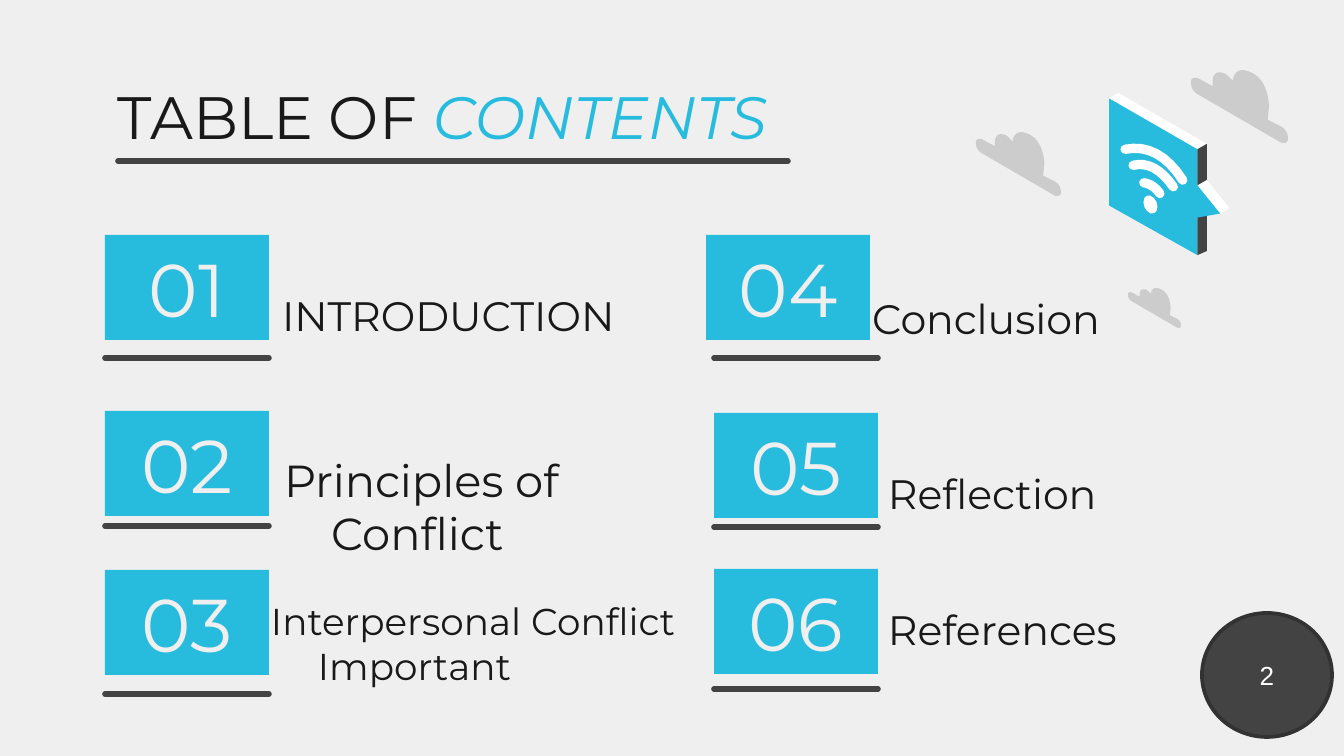
from dataclasses import dataclass

import pptx
import pptx.dml.color
import pptx.enum.shapes
import pptx.enum.text
import pptx.oxml
import pptx.oxml.ns
import pptx.util

RGB = pptx.dml.color.RGBColor
PAPER = RGB.from_string("EFEFEF")
INK = RGB.from_string("191919")
CYAN = RGB.from_string("27BBDE")
DARK = RGB.from_string("434343")
RIM = RGB.from_string("323232")
GREY = RGB.from_string("CCCCCC")
WHITE = RGB.from_string("FFFFFF")

SANS = "Montserrat"
PX = 914400 / 134.4
ANCHOR = pptx.enum.text.MSO_ANCHOR
ALIGN = pptx.enum.text.PP_ALIGN
SHAPE = pptx.enum.shapes.MSO_SHAPE
PAD = 13
TILE_W, TILE_H = 164, 105
COLUMNS = (105, 714)
STEPS = 8  # straight pieces per curve


@dataclass
class Entry:
    tile_y: int
    rule_y: int
    label: str
    left: int
    top: int
    width: int
    size: int = 22
    bottom: int = 0
    nudge: int = 0  # sideways shift of the tile


# One list per column; a label with a bottom margin also has a hanging indent
ENTRIES = [
    [Entry(235, 358, "INTRODUCTION", 269, 235, 391),
     Entry(411, 526, "Principles of Conflict", 251, 516, 437, 24, 61),
     Entry(570, 694, "Interpersonal Conflict Important", 238, 644, 614, 20, 61)],
    [Entry(235, 358, "Conclusion", 839, 251, 391, bottom=PAD, nudge=-8),
     Entry(413, 527, "Reflection", 875, 413, 370),
     Entry(569, 689, "References", 875, 549, 431)],
]

# Outlines: pairs are corners, four numbers are a control point and an end
CLOUD_GRID = 72
CLOUDS = [(1191, 70, 97), (1128, 288, 53), (976, 132, 85)]  # left, top, width
CLOUD = [(39, 0), (56, 3, 58, 26), (57, 37), (67, 42), (72, 45, 72, 51),
         (72, 55, 67, 54), (5, 18), (0, 15, 0, 9), (0, 5, 5, 6), (16, 12),
         (16, 8), (17, -1, 26, 3), (31, 8), (32, 0, 39, 0)]

BUBBLE_X, BUBBLE_Y, BUBBLE_SCALE = 1109, 93, 1.34
BUBBLE = [
    (WHITE, [(7, 0), (73, 38), (73, 118), (66, 121), (0, 84), (0, 4)]),
    (CYAN, [(0, 4), (66, 42), (66, 121), (0, 84)]),
    (DARK, [(73, 38), (73, 118), (66, 121), (66, 42)]),
    (WHITE, [(73, 65), (90, 86), (82, 91), (66, 69)]),
    (CYAN, [(66, 69), (83, 90), (66, 93), (62, 81)]),
]
WAVES = [[(26, 67), (33, 68, 38, 75)],
         [(18, 54), (34, 50, 48, 70)],
         [(12, 42), (37, 37, 55, 65)]]


def px(*values: float) -> list[int]:
    return [pptx.util.Emu(round(v * PX)) for v in values]


def set_all(target, **values) -> None:
    for name, value in values.items():
        setattr(target, name, value)


def frame(sp, anchor, top: int = PAD, bottom: int = PAD):
    tf = sp.text_frame
    side, top, bottom = px(PAD, top, bottom)
    set_all(tf, word_wrap=True, auto_size=pptx.enum.text.MSO_AUTO_SIZE.NONE,
            vertical_anchor=anchor, margin_left=side, margin_right=side,
            margin_top=top, margin_bottom=bottom)
    return tf.paragraphs[0]


def add_run(p, text: str, size: int, color: RGB, name: str = SANS, italic: bool = False) -> None:
    r = p.add_run()
    r.text = text
    set_all(r.font, size=pptx.util.Pt(size), name=name, italic=italic)
    r.font.color.rgb = color


def paint(sp, fill: RGB):
    sp.shadow.inherit = False
    sp.fill.solid()
    sp.fill.fore_color.rgb = fill
    sp.line.fill.background()
    return sp


def stroke(sp, color: RGB, points: float) -> None:
    sp.line.color.rgb = color
    sp.line.width = pptx.util.Pt(points)
    sp.line._get_or_add_ln().set("cap", "rnd")


def add_rule(slide, x: int, y: int, width: int) -> None:
    line = slide.shapes.add_connector(
        pptx.enum.shapes.MSO_CONNECTOR.STRAIGHT, *px(x, y, x + width, y))
    stroke(line, DARK, 3)
    line._element.spPr.append(pptx.oxml.parse_xml(
        f"<a:effectLst {pptx.oxml.ns.nsdecls('a')}/>"))


def flatten(nodes: list[tuple[int, ...]]) -> list[tuple[float, ...]]:
    points = [nodes[0]]
    for node in nodes[1:]:
        if len(node) == 2:
            points.append(node)
            continue
        start, control, end = points[-1], node[:2], node[2:]
        for i in range(1, STEPS + 1):
            t = i / STEPS
            points.append(tuple((1 - t)**2 * a + 2 * t * (1 - t) * b + t * t * c
                                for a, b, c in zip(start, control, end)))
    return points


def add_outline(slide, nodes: list[tuple[int, ...]], left: int, top: int,
                scale: float, close: bool = True):
    points = [tuple(px(left + x * scale, top + y * scale)) for x, y in flatten(nodes)]
    builder = slide.shapes.build_freeform(*points[0])
    builder.add_line_segments(points[1:], close=close)
    return builder.convert_to_shape()


def add_entry(slide, number: int, column: int, e: Entry) -> None:
    tile = paint(slide.shapes.add_shape(
        SHAPE.RECTANGLE, *px(column + e.nudge, e.tile_y, TILE_W, TILE_H)), CYAN)
    p = frame(tile, ANCHOR.MIDDLE)
    p.alignment = ALIGN.CENTER
    add_run(p, f"{number:02}", 40, PAPER)
    add_rule(slide, column, e.rule_y, TILE_W)
    box = slide.shapes.add_textbox(*px(e.left, e.top, e.width, TILE_H))
    p = frame(box, ANCHOR.BOTTOM, bottom=e.bottom)
    if e.bottom:
        for name, value in zip(("marL", "indent"), px(67, -47)):
            p._p.get_or_add_pPr().set(name, str(value))
    add_run(p, e.label, e.size, INK)


def add_bubble(slide) -> None:
    place = (BUBBLE_X, BUBBLE_Y, BUBBLE_SCALE)
    for fill, nodes in BUBBLE:
        paint(add_outline(slide, nodes, *place), fill)
    for nodes in WAVES:
        wave = add_outline(slide, nodes, *place, close=False)
        wave.shadow.inherit = False
        wave.fill.background()
        stroke(wave, WHITE, 5)
    dot = paint(slide.shapes.add_shape(SHAPE.OVAL, *px(1144, 195, 13, 19)), WHITE)
    dot.rotation = -22


def main() -> None:
    prs = pptx.Presentation()
    prs.slide_width, prs.slide_height = px(1344, 756)
    slide = prs.slides.add_slide(prs.slide_layouts[5])
    slide.background.fill.solid()
    slide.background.fill.fore_color.rgb = PAPER

    # Title
    title = slide.shapes.title
    set_all(title, **dict(zip(("left", "top", "width", "height"), px(105, 80, 1134, 70))))
    p = frame(title, ANCHOR.TOP, top=0)
    p.alignment = ALIGN.LEFT
    add_run(p, "TABLE OF ", 32, INK)
    add_run(p, "CONTENTS", 32, CYAN, italic=True)
    add_rule(slide, 118, 161, 670)

    # Contents
    number = 0
    for column, entries in zip(COLUMNS, ENTRIES):
        for entry in entries:
            number += 1
            add_entry(slide, number, column, entry)

    # Clouds and speech bubble
    for left, top, width in CLOUDS:
        paint(add_outline(slide, CLOUD, left, top, width / CLOUD_GRID), GREY)
    add_bubble(slide)

    # Page number
    badge = paint(slide.shapes.add_shape(SHAPE.OVAL, *px(1202, 613, 130, 124)), DARK)
    stroke(badge, RIM, 2)
    p = frame(badge, ANCHOR.MIDDLE)
    p.alignment = ALIGN.CENTER
    add_run(p, "2", 14, WHITE, "Arial")

    prs.save("out.pptx")


if __name__ == "__main__":
    main()
